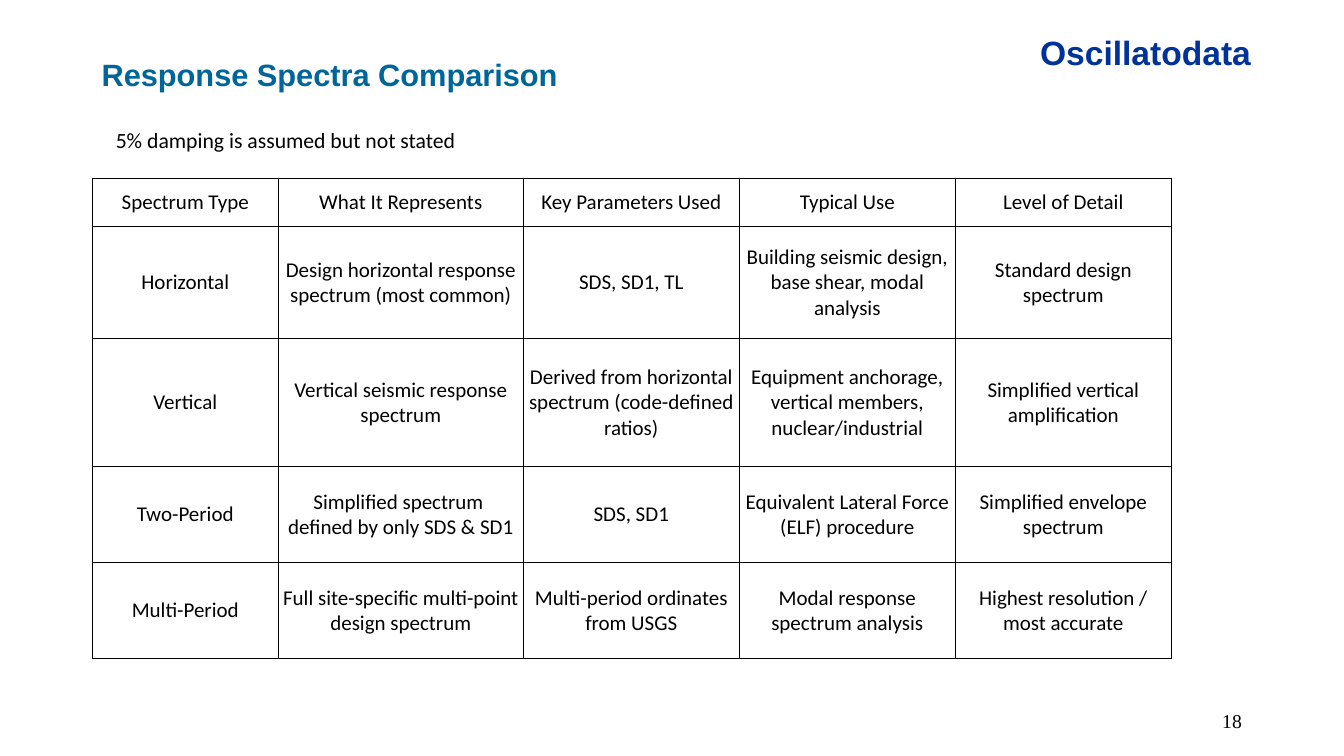
import dataclasses
import typing

import lxml.etree
import pptx
import pptx.dml.color
import pptx.enum.text
import pptx.oxml.ns
import pptx.util

Pt = pptx.util.Pt
Align = pptx.enum.text.PP_ALIGN
Anchor = pptx.enum.text.MSO_ANCHOR
Fit = pptx.enum.text.MSO_AUTO_SIZE


@dataclasses.dataclass(frozen=True)
class Face:
    font: str
    size: float
    color: str
    bold: bool = False


@dataclasses.dataclass(frozen=True)
class Theme:
    brand: Face = Face("Arial", 24, "003399", True)
    title: Face = Face("Arial", 22, "006699", True)
    note: Face = Face("Calibri", 15.5, "000000")
    cell: Face = Face("Calibri", 15, "000000")
    page: Face = Face("Times New Roman", 14, "010000")
    paper: str = "FFFFFF"
    rule: str = "000000"
    line: float = 1


@dataclasses.dataclass(frozen=True)
class Label:
    text: str
    face: Face
    left: float
    top: float
    width: float
    height: float
    wrap: bool = True
    grow: bool = True
    align: Align = Align.LEFT
    anchor: Anchor = Anchor.TOP


THEME = Theme()

LABELS = [
    Label("18", THEME.page, 678.2, 500.4, 216, 28.8,
          grow=False, align=Align.RIGHT, anchor=Anchor.MIDDLE),
    Label("Oscillatodata", THEME.brand, 735.8, 19.5, 169.2, 36, wrap=False),
    Label("Response Spectra Comparison", THEME.title, 65.5, 36, 344.9, 33.8, wrap=False),
    Label("5% damping is assumed but not stated", THEME.note, 75.6, 87.1, 344.9, 25.9),
]

LEFT, TOP = 65.9, 127.4
WIDTHS = [132.9, 175, 154.3, 154.3, 154.3]
HEIGHTS = [34.3, 80, 91.4, 68.6, 68.6]
ROWS = [
    ["Spectrum Type", "What It Represents", "Key Parameters Used",
     "Typical Use", "Level of Detail"],
    ["Horizontal", "Design horizontal response spectrum (most common)", "SDS, SD1, TL",
     "Building seismic design, base shear, modal analysis", "Standard design spectrum"],
    ["Vertical", "Vertical seismic response spectrum",
     "Derived from horizontal spectrum (code-defined ratios)",
     "Equipment anchorage, vertical members, nuclear/industrial",
     "Simplified vertical amplification"],
    ["Two-Period", "Simplified spectrum \ndefined by only SDS & SD1", "SDS, SD1",
     "Equivalent Lateral Force (ELF) procedure", "Simplified envelope spectrum"],
    ["Multi-Period", "Full site-specific multi-point design spectrum",
     "Multi-period ordinates from USGS", "Modal response spectrum analysis",
     "Highest resolution / most accurate"],
]


def write(frame: typing.Any, text: str, face: Face, align: Align) -> None:
    para = frame.paragraphs[0]
    para.alignment = align
    for index, part in enumerate(text.split("\n")):
        if index:
            para.add_line_break()
        run = para.add_run()
        run.text = part
        run.font.name = face.font
        run.font.size = Pt(face.size)
        run.font.bold = face.bold
        run.font.color.rgb = pptx.dml.color.RGBColor.from_string(face.color)


def add_label(slide: typing.Any, label: Label) -> None:
    box = slide.shapes.add_textbox(
        Pt(label.left), Pt(label.top), Pt(label.width), Pt(label.height))
    frame = box.text_frame
    frame.word_wrap = label.wrap
    frame.auto_size = Fit.SHAPE_TO_FIT_TEXT if label.grow else Fit.NONE
    frame.vertical_anchor = label.anchor
    write(frame, label.text, label.face, label.align)


def add_rules(cell: typing.Any) -> None:
    props = cell._tc.get_or_add_tcPr()
    name = pptx.oxml.ns.qn
    for side in ("a:lnL", "a:lnR", "a:lnT", "a:lnB"):
        edge = lxml.etree.SubElement(props, name(side), w=str(Pt(THEME.line)))
        fill = lxml.etree.SubElement(edge, name("a:solidFill"))
        lxml.etree.SubElement(fill, name("a:srgbClr"), val=THEME.rule)


def fill_cell(cell: typing.Any, text: str) -> None:
    add_rules(cell)
    cell.fill.solid()
    cell.fill.fore_color.rgb = pptx.dml.color.RGBColor.from_string(THEME.paper)
    cell.margin_left = cell.margin_right = cell.margin_top = Pt(0.7)
    cell.margin_bottom = Pt(0)
    cell.vertical_anchor = Anchor.MIDDLE
    write(cell.text_frame, text, THEME.cell, Align.CENTER)


def add_grid(slide: typing.Any) -> None:
    table = slide.shapes.add_table(
        len(ROWS), len(WIDTHS), Pt(LEFT), Pt(TOP),
        Pt(sum(WIDTHS)), Pt(sum(HEIGHTS))).table
    table.first_row = table.horz_banding = False
    for column, width in zip(table.columns, WIDTHS):
        column.width = Pt(width)
    for row, height, texts in zip(table.rows, HEIGHTS, ROWS):
        row.height = Pt(height)
        for cell, text in zip(row.cells, texts):
            fill_cell(cell, text)


def main() -> None:
    deck = pptx.Presentation()
    deck.slide_width, deck.slide_height = Pt(960), Pt(540)
    slide = deck.slides.add_slide(deck.slide_layouts[6])

    # Page number, brand, title and note
    for label in LABELS:
        add_label(slide, label)

    # Comparison table
    add_grid(slide)

    deck.save("out.pptx")


if __name__ == "__main__":
    main()
